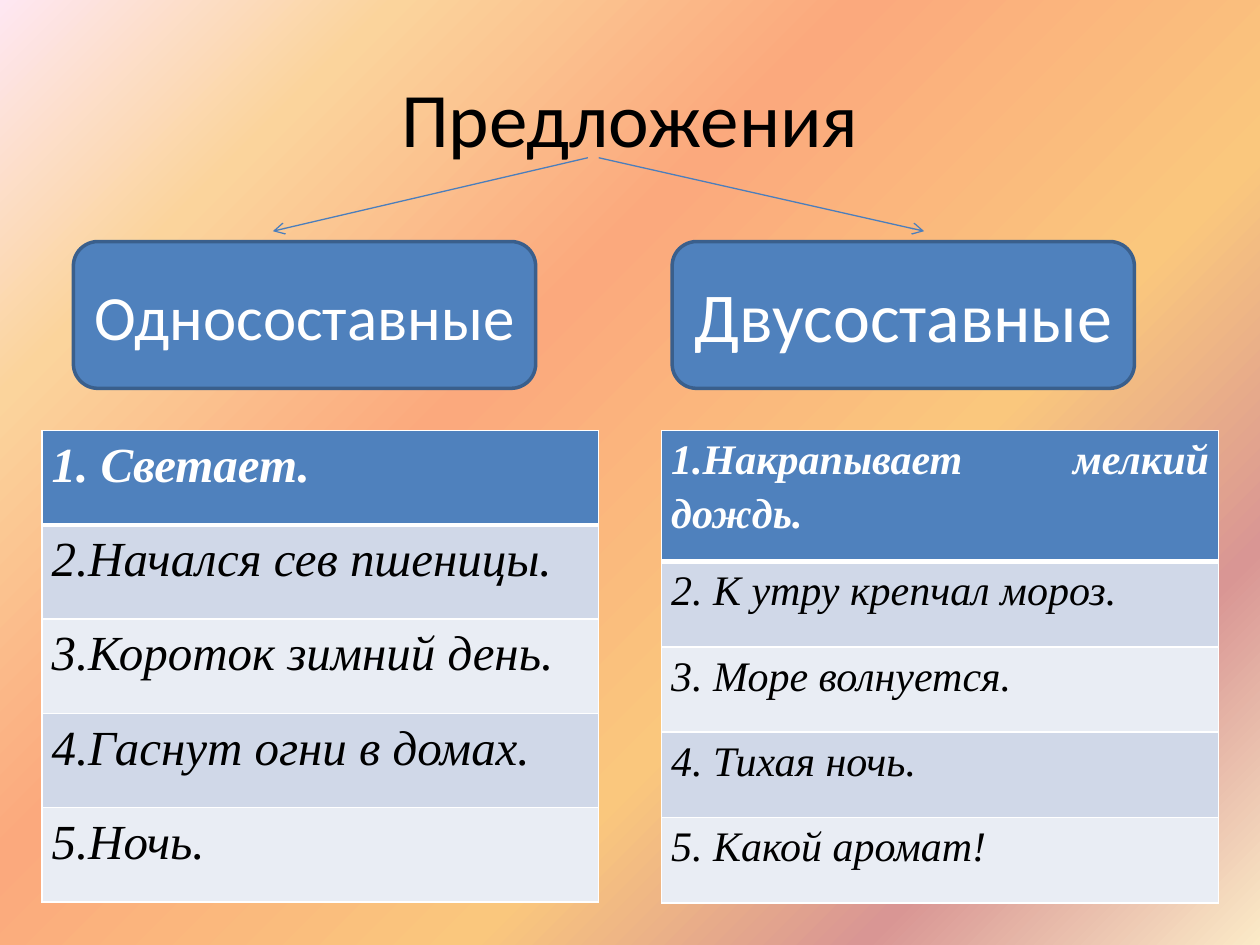
import pptx
import pptx.dml.color
import pptx.enum.shapes
import pptx.enum.text
import pptx.oxml
import pptx.oxml.ns
import pptx.util
from pptx.util import Cm

NS = pptx.oxml.ns.nsdecls("a")
ALIGN = pptx.enum.text.PP_ALIGN
MIDDLE = pptx.enum.text.MSO_ANCHOR.MIDDLE


def color(hex_text):
    return pptx.dml.color.RGBColor.from_string(hex_text)


def xml(markup):
    """Parse one DrawingML element, given without its namespace."""
    tag, rest = markup[:markup.index(">")], markup[markup.index(">"):]
    closing = "/" if tag.endswith("/") else ""
    return pptx.oxml.parse_xml(f"{tag.rstrip('/')} {NS}{closing}{rest}")


def write(frame, text, size, font="Calibri", ink="000000", bold=False,
          italic=False, align=ALIGN.CENTER, spacing=None, anchor=None):
    frame.word_wrap = True
    if anchor is not None:
        frame.vertical_anchor = anchor
    paragraph = frame.paragraphs[0]
    paragraph.alignment = align
    paragraph.line_spacing = spacing
    run = paragraph.add_run()
    run.text = text
    run.font.size = pptx.util.Pt(size)
    run.font.name = font
    run.font.bold = bold
    run.font.italic = italic
    run.font.color.rgb = color(ink)


class SentenceSlide:
    accent, outline, arrow_ink, white = "4F81BD", "3A5F8C", "4B7EBC", "FFFFFF"
    bands = ("E9EDF4", "D0D8E8")
    table_font = "Times New Roman"

    def __init__(self, slide):
        self.slide = slide

    def background(self, stops):
        """Blend the stops outwards from the bottom right corner."""
        self.slide.background.fill.gradient()
        gradient = next(self.slide.element.iter(pptx.oxml.ns.qn("a:gradFill")))
        marks = ""
        for place, tone, alpha in stops:
            marks += (f'<a:gs pos="{place * 1000}"><a:srgbClr val="{tone}">'
                      f'<a:alpha val="{alpha * 1000}"/></a:srgbClr></a:gs>')
        gradient.getparent().replace(gradient, xml(
            f'<a:gradFill rotWithShape="1"><a:gsLst>{marks}</a:gsLst>'
            '<a:path path="circle"><a:fillToRect l="100000" t="100000"/></a:path>'
            '</a:gradFill>'))

    def title(self, text, left, top, width, height):
        heading = self.slide.shapes.add_textbox(Cm(left), Cm(top), Cm(width), Cm(height))
        write(heading.text_frame, text, 44, anchor=MIDDLE)

    def box(self, text, size, left, top, width, height):
        kind = self.slide.shapes.add_shape(
            pptx.enum.shapes.MSO_SHAPE.ROUNDED_RECTANGLE,
            Cm(left), Cm(top), Cm(width), Cm(height))
        kind.shadow.inherit = False
        kind.fill.solid()
        kind.fill.fore_color.rgb = color(self.accent)
        kind.line.color.rgb = color(self.outline)
        kind.line.width = pptx.util.Pt(2)
        write(kind.text_frame, text, size, ink=self.white, anchor=MIDDLE)

    def arrow(self, x1, y1, x2, y2):
        branch = self.slide.shapes.add_connector(
            pptx.enum.shapes.MSO_CONNECTOR.STRAIGHT, Cm(x1), Cm(y1), Cm(x2), Cm(y2))
        branch.line.color.rgb = color(self.arrow_ink)
        branch.line.width = pptx.util.Pt(0.75)
        properties = branch.element.spPr
        properties.find(pptx.oxml.ns.qn("a:ln")).append(xml('<a:tailEnd type="arrow"/>'))
        properties.append(xml("<a:effectLst/>"))

    def borders(self, cell, top, bottom):
        widths = {"L": 1, "R": 1, "T": top, "B": bottom}
        properties = cell.fill._xPr
        for index, (side, points) in enumerate(widths.items()):
            properties.insert(index, xml(
                f'<a:ln{side} w="{points * 12700}"><a:solidFill>'
                f'<a:srgbClr val="{self.white}"/></a:solidFill></a:ln{side}>'))

    def table(self, examples, size, left, top, width, head_height, row_height):
        heights = [head_height] + [row_height] * (len(examples) - 1)
        grid = self.slide.shapes.add_table(
            len(examples), 1, Cm(left), Cm(top), Cm(width), Cm(sum(heights))).table
        for index, (example, height) in enumerate(zip(examples, heights)):
            head = index == 0
            grid.rows[index].height = Cm(height)
            cell = grid.cell(index, 0)
            cell.margin_left = cell.margin_right = Cm(0.19)
            cell.margin_top = cell.margin_bottom = 0
            cell.fill.solid()
            cell.fill.fore_color.rgb = color(self.accent if head else self.bands[index % 2])
            self.borders(cell, top=3 if index == 1 else 1, bottom=3 if head else 1)
            write(cell.text_frame, example, size, font=self.table_font,
                  ink=self.white if head else "000000", bold=head, italic=True,
                  align=ALIGN.JUSTIFY, spacing=1.15)


def main():
    deck = pptx.Presentation()
    deck.slide_width, deck.slide_height = Cm(25.4), Cm(19.05)
    page = SentenceSlide(deck.slides.add_slide(deck.slide_layouts[6]))

    # Background and heading
    page.background([(0, "FBEAC7", 100), (18, "D99694", 46), (36, "FAC77D", 100),
                     (61, "FBA97D", 100), (82, "FBD49C", 100), (100, "FEE7F2", 100)])
    page.title("Предложения", 1.27, 0.76, 22.86, 3.18)

    # One-part sentences
    one_part = ["1. Светает.", "2.Начался сев пшеницы.", "3.Короток зимний день.",
                "4.Гаснут огни в домах.", "5.Ночь."]
    page.table(one_part, 28, 0.85, 8.68, 11.22, 1.9, 1.9)
    page.box("Односоставные", 36, 1.48, 4.87, 9.32, 2.96)

    # Two-part sentences
    two_part = ["1.Накрапывает мелкий дождь.", "2. К утру крепчал мороз.",
                "3. Море волнуется.", "4. Тихая ночь.", "5. Какой аромат!"]
    page.box("Двусоставные", 40, 13.55, 4.87, 9.32, 2.96)

    # Branches from the heading to both kinds
    page.arrow(11.85, 3.18, 5.5, 4.66)
    page.arrow(12.07, 3.18, 18.63, 4.66)

    page.table(two_part, 24, 13.34, 8.68, 11.22, 2.64, 1.72)

    deck.save("out.pptx")


if __name__ == "__main__":
    main()
